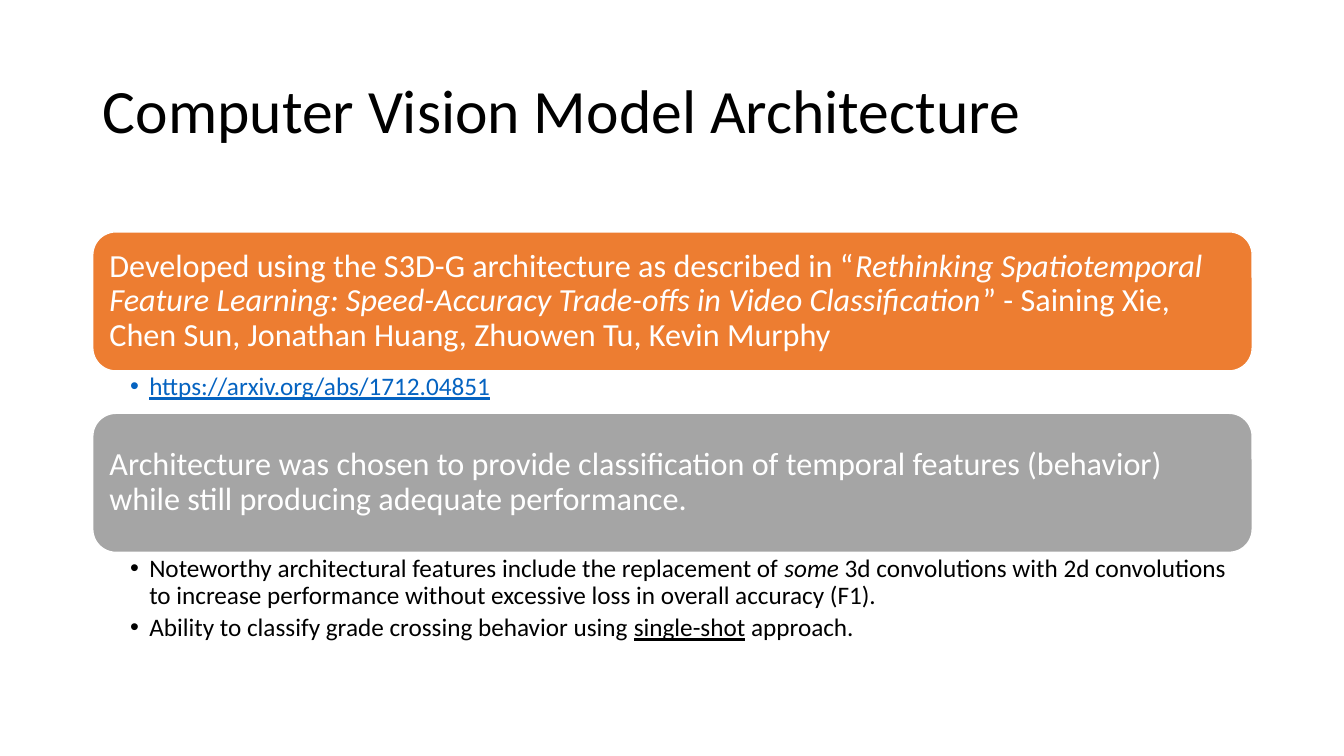
import lxml.etree
import pptx
import pptx.dml.color
import pptx.enum.shapes
import pptx.enum.text
import pptx.oxml.ns
import pptx.util

WHITE = pptx.dml.color.RGBColor(0xFF, 0xFF, 0xFF)
BLACK = pptx.dml.color.RGBColor(0x00, 0x00, 0x00)
ORANGE = pptx.dml.color.RGBColor(0xED, 0x7D, 0x31)
GRAY = pptx.dml.color.RGBColor(0xA5, 0xA5, 0xA5)
LINK_BLUE = pptx.dml.color.RGBColor(0x05, 0x63, 0xC1)

FONT = "Calibri"
SLIDE_WIDTH, SLIDE_HEIGHT = 13.33, 7.5
MARGIN = 0.92
CONTENT_WIDTH = 11.5
TITLE_TOP, TITLE_HEIGHT = 0.4, 1.45
SECTIONS_TOP = 2.3
BANNER_HEIGHT = 1.38
BULLET_INDENT = 0.19

SECTIONS = [
    {
        "fill": ORANGE,
        "banner": [
            ("Developed using the S3D-G architecture as described in “", ""),
            ("Rethinking Spatiotemporal Feature Learning: Speed-Accuracy "
             "Trade-offs in Video Classification", "italic"),
            ("” - Saining Xie, Chen Sun, Jonathan Huang, Zhuowen Tu, Kevin Murphy", ""),
        ],
        "bullets": [[("https://arxiv.org/abs/1712.04851", "underline")]],
        "bullet_color": LINK_BLUE,
        "list_height": 0.42,
    },
    {
        "fill": GRAY,
        "banner": [
            ("Architecture was chosen to provide classification of temporal features "
             "(behavior) while still producing adequate performance.", ""),
        ],
        "bullets": [
            [
                ("Noteworthy architectural features include the replacement of ", ""),
                ("some", "italic"),
                (" 3d convolutions with 2d convolutions to increase performance "
                 "without excessive loss in overall accuracy (F1).", ""),
            ],
            [
                ("Ability to classify grade crossing behavior using ", ""),
                ("single-shot", "underline"),
                (" approach.", ""),
            ],
        ],
        "bullet_color": BLACK,
        "list_height": 0.96,
    },
]


def place(shape, box):
    """Move a shape to a box of left, top, width and height in inches."""
    shape.left, shape.top, shape.width, shape.height = map(pptx.util.Inches, box)


def set_frame(text_frame, anchor, margins):
    """Set wrapping, anchor and the left, top, right and bottom margins."""
    text_frame.word_wrap = True
    text_frame.auto_size = pptx.enum.text.MSO_AUTO_SIZE.NONE
    text_frame.vertical_anchor = anchor
    (text_frame.margin_left, text_frame.margin_top,
     text_frame.margin_right, text_frame.margin_bottom) = map(pptx.util.Inches, margins)


def write_runs(paragraph, runs, size, color):
    """Fill a left-aligned paragraph with (text, style) runs."""
    paragraph.alignment = pptx.enum.text.PP_ALIGN.LEFT
    paragraph.line_spacing = 0.9
    paragraph.space_before = pptx.util.Pt(0)
    for text, style in runs:
        run = paragraph.add_run()
        run.text = text
        run.font.name = FONT
        run.font.size = pptx.util.Pt(size)
        run.font.color.rgb = color
        run.font.italic = style == "italic"
        run.font.underline = style == "underline"


def add_bullet(paragraph):
    """Give a paragraph a round bullet with a hanging indent."""
    properties = paragraph._p.get_or_add_pPr()
    indent = pptx.util.Inches(BULLET_INDENT)
    properties.set("marL", str(indent))
    properties.set("indent", str(-indent))
    for tag, name, value in (("a:buFont", "typeface", "Arial"), ("a:buChar", "char", "•")):
        element = lxml.etree.SubElement(properties, pptx.oxml.ns.qn(tag))
        element.set(name, value)


def build_title(title, box):
    """Place and write the slide title."""
    place(title, box)
    set_frame(title.text_frame, pptx.enum.text.MSO_ANCHOR.MIDDLE, (0.1, 0.05, 0.1, 0.05))
    write_runs(title.text_frame.paragraphs[0],
               [("Computer Vision Model Architecture", "")], 44, BLACK)


def build_banner(slide, box, runs, fill):
    """Draw a rounded banner holding a statement."""
    banner = slide.shapes.add_shape(
        pptx.enum.shapes.MSO_SHAPE.ROUNDED_RECTANGLE, *map(pptx.util.Inches, box))
    banner.shadow.inherit = False
    banner.fill.solid()
    banner.fill.fore_color.rgb = fill
    banner.line.color.rgb = WHITE
    banner.line.width = pptx.util.Pt(1)
    set_frame(banner.text_frame, pptx.enum.text.MSO_ANCHOR.MIDDLE, (0.1, 0.1, 0.1, 0.1))
    write_runs(banner.text_frame.paragraphs[0], runs, 23, WHITE)


def build_list(body, box, bullets, color):
    """Place a body placeholder and fill it with bullets."""
    place(body, box)
    text_frame = body.text_frame
    set_frame(text_frame, pptx.enum.text.MSO_ANCHOR.TOP, (0.37, 0.03, 0.18, 0.03))
    for index, runs in enumerate(bullets):
        paragraph = text_frame.add_paragraph() if index else text_frame.paragraphs[0]
        paragraph.level = 1
        write_runs(paragraph, runs, 18, color)
        paragraph.space_after = pptx.util.Pt(3.6)
        add_bullet(paragraph)


def build_section(slide, body, box, section):
    """Stack a banner and its bullet list inside a box."""
    left, top, width, height = box
    build_banner(slide, (left, top, width, BANNER_HEIGHT), section["banner"], section["fill"])
    build_list(body, (left, top + BANNER_HEIGHT, width, height - BANNER_HEIGHT),
               section["bullets"], section["bullet_color"])


def main():
    """Build the slide and save it."""
    presentation = pptx.Presentation()
    presentation.slide_width = pptx.util.Inches(SLIDE_WIDTH)
    presentation.slide_height = pptx.util.Inches(SLIDE_HEIGHT)
    two_content_layout = presentation.slide_layouts[3]
    slide = presentation.slides.add_slide(two_content_layout)
    title, *bodies = slide.placeholders
    build_title(title, (MARGIN, TITLE_TOP, CONTENT_WIDTH, TITLE_HEIGHT))
    top = SECTIONS_TOP
    for body, section in zip(bodies, SECTIONS):
        height = BANNER_HEIGHT + section["list_height"]
        build_section(slide, body, (MARGIN, top, CONTENT_WIDTH, height), section)
        top += height
    presentation.save("out.pptx")


if __name__ == "__main__":
    main()
